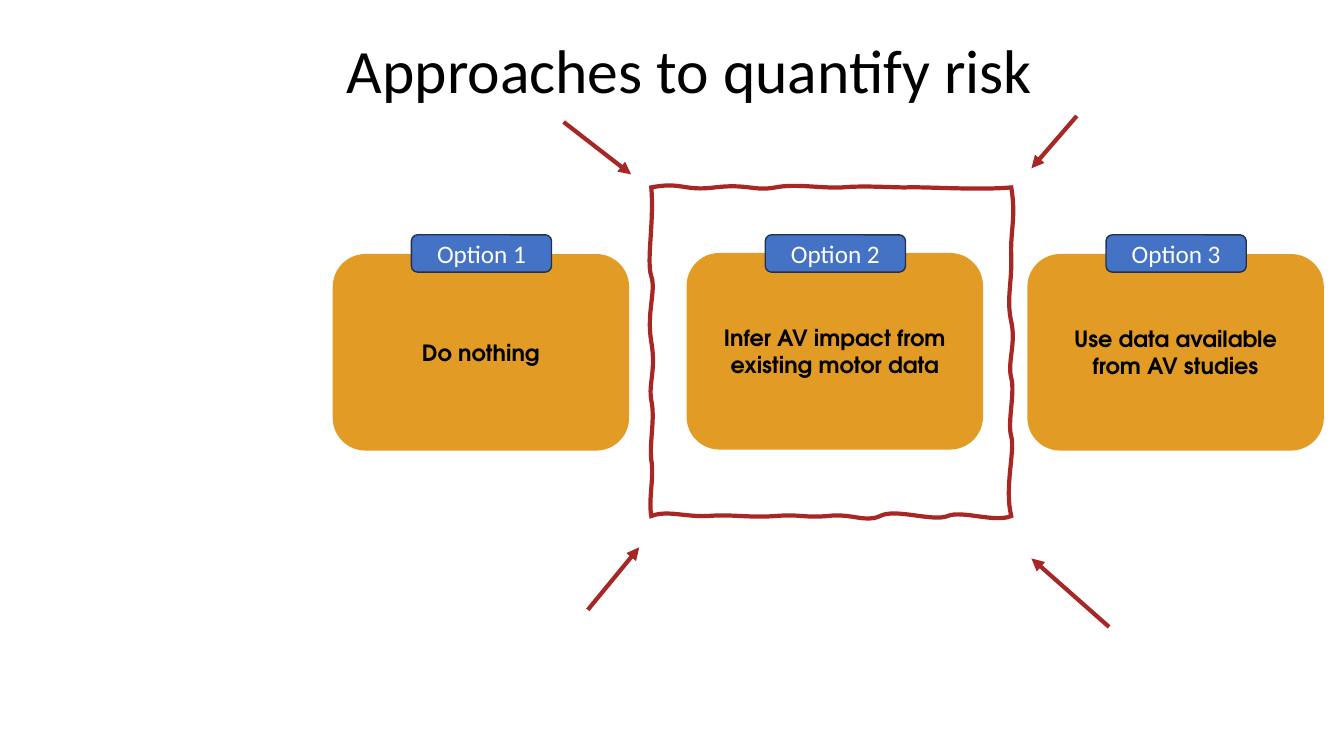
from lxml import etree
from pptx import Presentation
from pptx.dml.color import RGBColor
from pptx.enum.shapes import MSO_CONNECTOR, MSO_SHAPE
from pptx.enum.text import MSO_ANCHOR, MSO_AUTO_SIZE, PP_ALIGN
from pptx.oxml.ns import qn
from pptx.util import Inches, Pt

ROUNDED = MSO_SHAPE.ROUNDED_RECTANGLE
STRAIGHT = MSO_CONNECTOR.STRAIGHT
MIDDLE = MSO_ANCHOR.MIDDLE
NO_AUTOFIT = MSO_AUTO_SIZE.NONE
LEFT, CENTER = PP_ALIGN.LEFT, PP_ALIGN.CENTER

# Content
TITLE = "Approaches to quantify risk"
OPTIONS = [  # label, text, card left, card top
    ("Option 1", "Do nothing", 3.3, 2.52),
    ("Option 2", "Infer AV impact from existing motor data", 6.81, 2.51),
    ("Option 3", "Use data available from AV studies", 10.19, 2.52),
]
ARROWS = [  # start, end
    ((10.68, 1.15), (10.23, 1.67)),
    ((11, 6.22), (10.23, 5.54)),
    ((5.83, 6.05), (6.34, 5.43)),
    ((5.59, 1.21), (6.26, 1.73)),
]
FRAME_START = (6.46, 1.86)
FRAME_CURVES = [  # two control points and an end point each
    ((6.76, 1.8), (6.78, 1.9), (7.09, 1.86)),
    ((7.41, 1.82), (7.48, 1.9), (7.69, 1.86)),
    ((7.89, 1.82), (8.14, 1.87), (8.35, 1.86)),
    ((8.56, 1.84), (8.84, 1.86), (8.98, 1.86)),
    ((9.13, 1.85), (9.7, 1.89), (10.03, 1.86)),
    ((10.08, 2.15), (10.02, 2.29), (10.03, 2.54)),
    ((10.04, 2.79), (9.98, 2.97), (10.03, 3.19)),
    ((10.08, 3.41), (9.99, 3.59), (10.03, 3.75)),
    ((10.07, 3.9), (9.99, 4.19), (10.03, 4.33)),
    ((10.07, 4.47), (9.96, 4.84), (10.03, 5.12)),
    ((9.87, 5.19), (9.54, 5.06), (9.4, 5.12)),
    ((9.25, 5.18), (8.88, 5.04), (8.73, 5.12)),
    ((8.58, 5.19), (8.45, 5.09), (8.21, 5.12)),
    ((7.97, 5.14), (7.94, 5.1), (7.69, 5.12)),
    ((7.43, 5.14), (7.26, 5.1), (7.02, 5.12)),
    ((6.79, 5.13), (6.62, 5.06), (6.46, 5.12)),
    ((6.43, 4.95), (6.49, 4.74), (6.46, 4.56)),
    ((6.44, 4.39), (6.5, 4.15), (6.46, 3.97)),
    ((6.43, 3.8), (6.51, 3.68), (6.46, 3.39)),
    ((6.41, 3.1), (6.51, 2.89), (6.46, 2.74)),
    ((6.41, 2.59), (6.49, 2.2), (6.46, 1.86)),
]
CARD_W, CARD_H = 2.94, 1.95
TAB_W, TAB_H = 1.39, 0.37
TAB_INDENT, TAB_TOP = 0.78, 2.33
COLORS = {"card": "E29C25", "tab": "4472C4", "tab_line": "1E3256",
          "red": "A72727", "black": "000000", "white": "FFFFFF"}
BODY_FONT, CARD_FONT = "Calibri", "TeX Gyre Adventor"


def color(name):
    return RGBColor.from_string(COLORS[name])


def write(tf, text, size, font, ink, align, bold=False):
    tf.text = text
    tf.word_wrap = True
    tf.vertical_anchor = MIDDLE
    p = tf.paragraphs[0]
    p.alignment = align
    f = p.runs[0].font
    f.size, f.name, f.bold = Pt(size), font, bold
    f.color.rgb = color(ink)


def set_line(sp, name, width):
    sp.line.color.rgb = color(name)
    sp.line.width = Pt(width)
    return sp.element.spPr.find(qn("a:ln"))


def add_box(s, left, top, width, height, fill):
    sp = s.shapes.add_shape(ROUNDED, Inches(left), Inches(top),
                            Inches(width), Inches(height))
    sp.shadow.inherit = False
    sp.fill.solid()
    sp.fill.fore_color.rgb = color(fill)
    return sp


def add_card(s, text, left, top):
    sp = add_box(s, left, top, CARD_W, CARD_H, "card")
    sp.line.fill.background()
    tf = sp.text_frame
    tf.margin_left = tf.margin_right = Inches(0.13)
    tf.margin_top = tf.margin_bottom = Inches(0.07)
    write(tf, text, 16, CARD_FONT, "black", CENTER, True)


def add_tab(s, label, card_left):
    sp = add_box(s, card_left + TAB_INDENT, TAB_TOP, TAB_W, TAB_H, "tab")
    set_line(sp, "tab_line", 1)
    write(sp.text_frame, label, 18, BODY_FONT, "white", CENTER)


def add_frame(s):
    x0, y0 = map(Inches, FRAME_START)
    builder = s.shapes.build_freeform(x0, y0)
    corners = [tuple(map(Inches, curve[-1])) for curve in FRAME_CURVES]
    builder.add_line_segments(corners, close=True)
    sp = builder.convert_to_shape()
    sp.shadow.inherit = False
    sp.fill.background()
    etree.SubElement(set_line(sp, "red", 3), qn("a:miter"), lim="800000")

    # Bend each straight segment into its curve
    segments = list(sp.element.iter(qn("a:lnTo")))
    for segment, curve in zip(segments, FRAME_CURVES):
        bend = etree.Element(qn("a:cubicBezTo"))
        for x, y in curve:
            etree.SubElement(bend, qn("a:pt"), x=str(Inches(x) - x0),
                             y=str(Inches(y) - y0))
        segment.getparent().replace(segment, bend)


def add_arrow(s, start, end):
    cn = s.shapes.add_connector(STRAIGHT, *map(Inches, start + end))
    ln = set_line(cn, "red", 3)
    etree.SubElement(ln, qn("a:tailEnd"), type="triangle")
    etree.SubElement(cn.element.spPr, qn("a:effectLst"))


def main():
    prs = Presentation()
    prs.slide_width, prs.slide_height = Inches(13.33), Inches(7.5)
    s = prs.slides.add_slide(prs.slide_layouts[5])

    # Title
    title = s.shapes.title
    title.left, title.top = Inches(3.34), Inches(0)
    title.width, title.height = Inches(8.71), Inches(1.45)
    write(title.text_frame, TITLE, 44, BODY_FONT, "black", LEFT)
    title.text_frame.auto_size = NO_AUTOFIT
    title.text_frame.paragraphs[0].line_spacing = 0.9

    # Option cards, then their label tabs
    for label, text, left, top in OPTIONS:
        add_card(s, text, left, top)
    for label, text, left, top in OPTIONS:
        add_tab(s, label, left)

    # Wavy frame and the arrows pointing at it
    add_frame(s)
    for start, end in ARROWS:
        add_arrow(s, start, end)

    prs.save("out.pptx")


if __name__ == "__main__":
    main()
